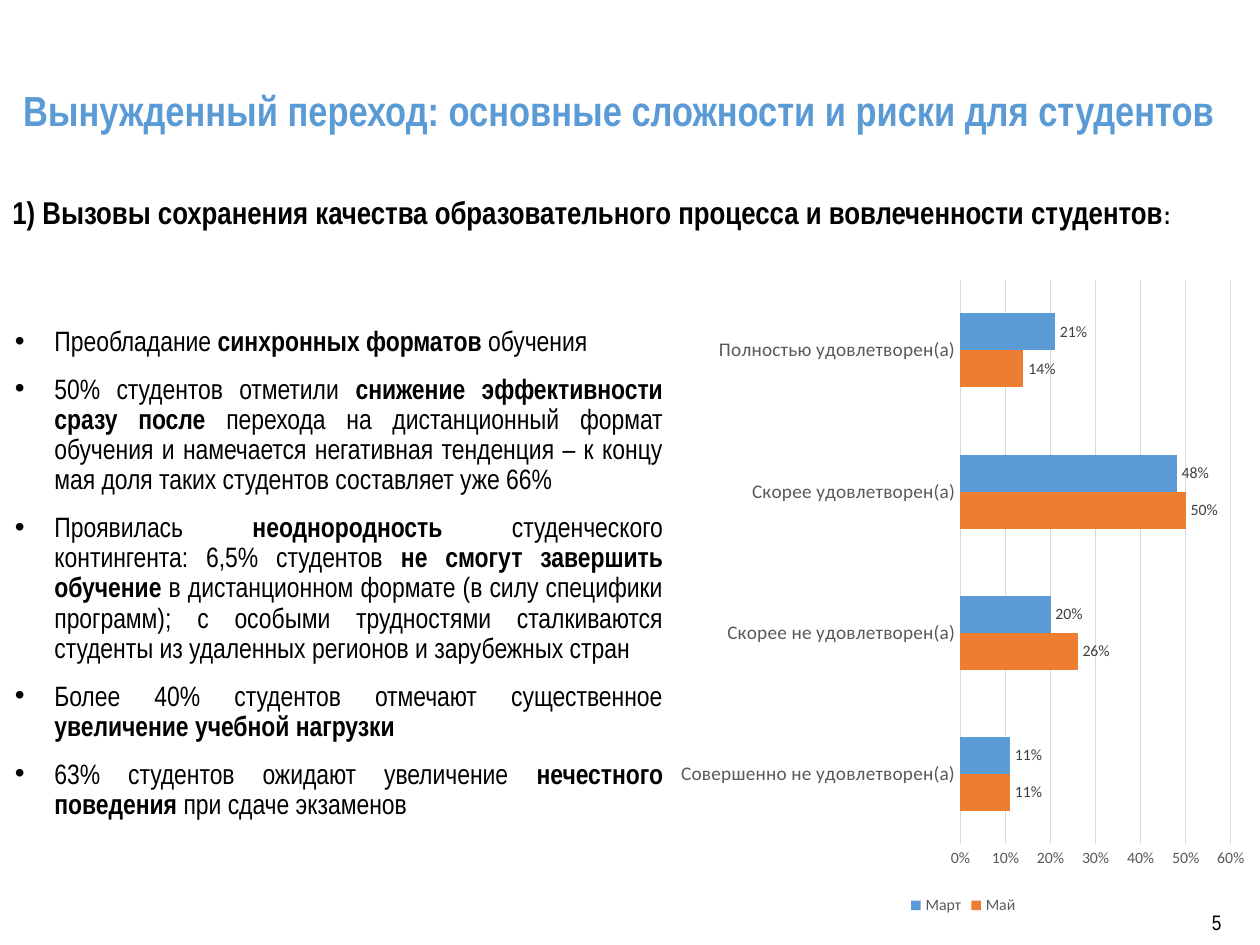
from dataclasses import dataclass

from lxml.etree import SubElement
from pptx import Presentation
from pptx.chart.data import CategoryChartData
from pptx.dml.color import RGBColor
from pptx.enum.chart import XL_CHART_TYPE as ChartType
from pptx.enum.chart import XL_LABEL_POSITION as LabelPosition
from pptx.enum.chart import XL_LEGEND_POSITION as LegendPosition
from pptx.enum.chart import XL_TICK_MARK as TickMark
from pptx.enum.text import MSO_ANCHOR as Anchor
from pptx.enum.text import MSO_AUTO_SIZE as AutoSize
from pptx.enum.text import PP_ALIGN as Align
from pptx.oxml.ns import qn
from pptx.util import Pt


@dataclass(frozen=True)
class Theme:
    text_font: str = "Arial Narrow"
    chart_font: str = "Calibri"
    black: str = "000000"
    blue: str = "5B9BD5"
    orange: str = "ED7D31"
    axis_text: str = "595959"
    label_text: str = "404040"
    grid: str = "D9D9D9"
    title_size: int = 24
    heading_size: int = 18
    colon_size: int = 14
    body_size: int = 16
    number_size: int = 12
    chart_size: int = 10
    category_size: int = 11
    small_size: int = 9


class SlideBuilder:
    def __init__(self, slide, theme):
        self.slide = slide
        self.theme = theme

    def style(self, font, size, color, name=None, bold=False):
        font.name = name or self.theme.text_font
        font.size = Pt(size)
        font.bold = bold
        font.color.rgb = RGBColor.from_string(color)

    def title(self, text, left, top, width, height):
        shape = self.slide.shapes.title
        shape.left, shape.top = Pt(left), Pt(top)
        shape.width, shape.height = Pt(width), Pt(height)
        frame = shape.text_frame
        frame.auto_size = AutoSize.NONE
        frame.vertical_anchor = Anchor.MIDDLE
        frame.text = text
        paragraph = frame.paragraphs[0]
        paragraph.alignment = Align.LEFT
        paragraph.line_spacing = 0.9
        self.style(paragraph.font, self.theme.title_size, self.theme.blue, bold=True)

    def text_frame(self, left, top, width, height, wrap=True):
        box = self.slide.shapes.add_textbox(Pt(left), Pt(top), Pt(width), Pt(height))
        box.text_frame.word_wrap = wrap
        return box.text_frame

    def heading(self, text, ending, left, top, width, height):
        frame = self.text_frame(left, top, width, height, wrap=False)
        frame.auto_size = AutoSize.SHAPE_TO_FIT_TEXT
        paragraph = frame.paragraphs[0]
        paragraph.add_run().text = text
        colon = paragraph.add_run()
        colon.text = ending
        colon.font.size = Pt(self.theme.colon_size)
        self.style(paragraph.font, self.theme.heading_size, self.theme.black, bold=True)

    def bullets(self, items, left, top, width, height):
        """Each item alternates plain and bold pieces, starting with plain."""
        frame = self.text_frame(left, top, width, height)
        for index, pieces in enumerate(items):
            paragraph = frame.add_paragraph() if index else frame.paragraphs[0]
            paragraph.alignment = Align.JUSTIFY
            paragraph.line_spacing = 0.9
            paragraph.space_before = Pt(10 if index else 0)
            properties = paragraph._p.get_or_add_pPr()
            properties.set("marL", str(Pt(44)))
            properties.set("indent", str(Pt(-22.5)))
            SubElement(properties, qn("a:buFont"), typeface="Arial")
            SubElement(properties, qn("a:buChar"), char="•")
            self.style(paragraph.font, self.theme.body_size, self.theme.black)
            for position, piece in enumerate(pieces):
                run = paragraph.add_run()
                run.text = piece
                run.font.bold = position % 2 == 1

    def page_number(self, text, left, top, width, height):
        frame = self.text_frame(left, top, width, height)
        frame.margin_left = frame.margin_right = 0
        frame.margin_top = frame.margin_bottom = 0
        frame.vertical_anchor = Anchor.MIDDLE
        frame.text = text
        self.style(frame.paragraphs[0].font, self.theme.number_size, self.theme.black)

    def bar_chart(self, categories, series, left, top, width, height):
        theme = self.theme
        data = CategoryChartData(number_format="0%")
        data.categories = categories
        for name, values, _ in series:
            data.add_series(name, values)
        chart = self.slide.shapes.add_chart(
            ChartType.BAR_CLUSTERED, Pt(left), Pt(top), Pt(width), Pt(height), data
        ).chart
        chart.has_title = False
        self.style(chart.font, theme.chart_size, theme.black, theme.chart_font)

        # Bars and value labels
        plot = chart.plots[0]
        plot.gap_width = 182
        plot.vary_by_categories = False
        for bars, (_, _, color) in zip(plot.series, series):
            bars.format.fill.solid()
            bars.format.fill.fore_color.rgb = RGBColor.from_string(color)
            labels = bars.data_labels
            labels.show_value = True
            labels.number_format = "0%"
            labels.number_format_is_linked = False
            labels.position = LabelPosition.OUTSIDE_END
            self.style(labels.font, theme.small_size, theme.label_text, theme.chart_font)

        # Axes and grid
        category_axis, value_axis = chart.category_axis, chart.value_axis
        for axis, size in ((category_axis, theme.category_size), (value_axis, theme.small_size)):
            axis.major_tick_mark = axis.minor_tick_mark = TickMark.NONE
            self.style(axis.tick_labels.font, size, theme.axis_text, theme.chart_font)
        value_axis.minimum_scale, value_axis.maximum_scale = 0, 0.6
        value_axis.major_unit = 0.1
        value_axis.tick_labels.number_format = "0%"
        value_axis.tick_labels.number_format_is_linked = False
        value_axis.format.line.fill.background()
        value_axis.has_major_gridlines = True
        for line in (category_axis.format.line, value_axis.major_gridlines.format.line):
            line.width = Pt(0.75)
            line.color.rgb = RGBColor.from_string(theme.grid)

        # Legend
        chart.has_legend = True
        chart.legend.position = LegendPosition.BOTTOM
        chart.legend.include_in_layout = False
        self.style(chart.legend.font, theme.small_size, theme.axis_text, theme.chart_font)

        # Plot area as shares of the chart frame
        plot_area = chart._chartSpace.chart.plotArea
        layout = plot_area.find(qn("c:layout"))
        if layout is None:
            layout = SubElement(plot_area, qn("c:layout"))
            plot_area.insert(0, layout)
        manual = SubElement(layout, qn("c:manualLayout"))
        settings = {"layoutTarget": "inner", "xMode": "edge", "yMode": "edge",
                    "x": 0.495, "y": 0.02, "w": 0.46, "h": 0.865}
        for tag, value in settings.items():
            SubElement(manual, qn(f"c:{tag}"), val=str(value))


def main():
    presentation = Presentation()
    presentation.slide_width, presentation.slide_height = Pt(720), Pt(540)
    theme = Theme()
    slide = presentation.slides.add_slide(presentation.slide_layouts[5])
    builder = SlideBuilder(slide, theme)

    # Title and page number
    builder.title("Вынужденный переход: основные сложности и риски для студентов",
                  6, 47, 729, 35)
    builder.page_number("5", 692.5, 515.5, 27.5, 23)

    # Challenges for students
    builder.bullets([
        ("Преобладание ", "синхронных форматов ", "обучения"),
        ("50% студентов отметили ", "снижение эффективности сразу после ",
         "перехода на дистанционный формат обучения и намечается негативная "
         "тенденция – к концу мая доля таких студентов составляет уже 66%"),
        ("Проявилась ", "неоднородность", " студенческого контингента: 6,5% студентов ",
         "не смогут завершить обучение ",
         "в дистанционном формате (в силу специфики программ); с особыми трудностями "
         "сталкиваются студенты из удаленных регионов и зарубежных стран"),
        ("Более 40% студентов отмечают существенное ", "увеличение учебной нагрузки"),
        ("63% студентов ожидают увеличение ", "нечестного поведения ",
         "при сдаче экзаменов"),
    ], -20, 183.5, 406, 425)

    # Satisfaction in March and May
    builder.bar_chart(
        ["Совершенно не удовлетворен(а)", "Скорее не удовлетворен(а)",
         "Скорее удовлетворен(а)", "Полностью удовлетворен(а)"],
        [("Май", (0.11, 0.26, 0.5, 0.14), theme.orange),
         ("Март", (0.11, 0.2, 0.48, 0.21), theme.blue)],
        382.5, 152.5, 336, 373)

    # Section heading
    builder.heading("1) Вызовы сохранения качества образовательного процесса "
                    "и вовлеченности студентов", ":", 0, 106.5, 688, 45)
    presentation.save("out.pptx")


if __name__ == "__main__":
    main()
